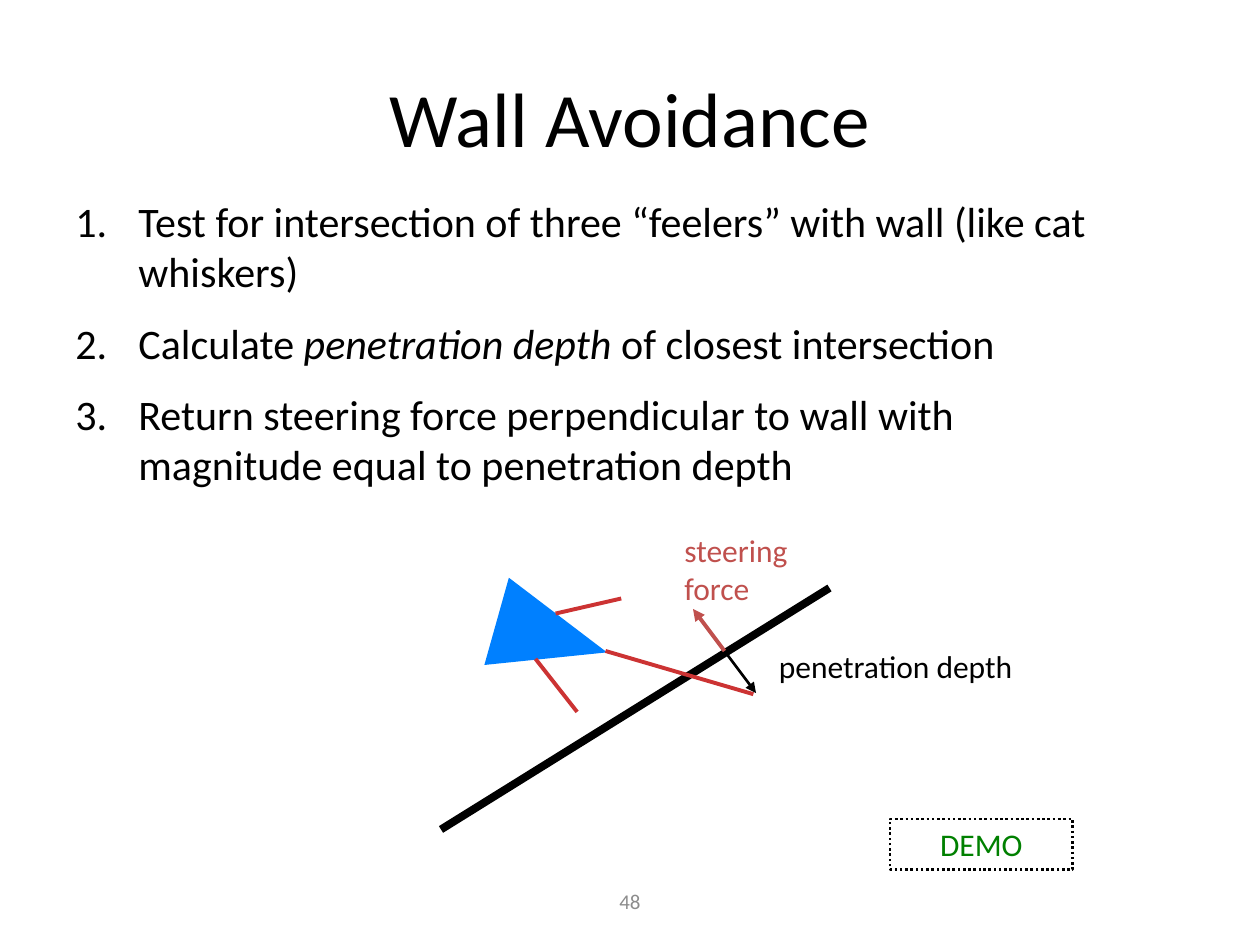
from lxml import etree
from pptx import Presentation
from pptx.dml.color import RGBColor
from pptx.enum.dml import MSO_LINE_DASH_STYLE as DASH
from pptx.enum.shapes import MSO_CONNECTOR as CONN, MSO_SHAPE as SHAPE
from pptx.enum.text import MSO_ANCHOR as ANCHOR, PP_ALIGN as ALIGN
from pptx.oxml.ns import qn
from pptx.util import Pt

FONT = "Calibri"
COLORS = {
    "text": "000000",
    "number": "8C8C8C",
    "agent": "0080FF",
    "feeler": "CC3333",
    "force": "C0504D",
    "demo": "008000",
}
STEPS = [
    [("Test for intersection of three “feelers” with wall (like cat whiskers)", False)],
    [("Calculate ", False), ("penetration depth", True), (" of closest intersection", False)],
    [("Return steering force perpendicular to wall with magnitude equal to penetration depth", False)],
]


def rgb(name):
    return RGBColor.from_string(COLORS[name])


def place(sp, box):
    for name, value in zip(("left", "top", "width", "height"), box):
        setattr(sp, name, Pt(value))


def add_run(p, text, size, color="text", **extra):
    r = p.add_run()
    r.text = text
    for name, value in {"name": FONT, "size": Pt(size), **extra}.items():
        setattr(r.font, name, value)
    r.font.color.rgb = rgb(color)


def write(sp, text, size, color="text", align=ALIGN.LEFT, anchor=ANCHOR.TOP):
    tf = sp.text_frame
    tf.word_wrap = True
    tf.vertical_anchor = anchor
    p = tf.paragraphs[0]
    p.alignment = align
    add_run(p, text, size, color)


def add_label(slide, box, text, size, **fmt):
    sp = slide.shapes.add_textbox(*map(Pt, box))
    write(sp, text, size, **fmt)


def add_line(slide, start, end, color, width, arrow=False):
    line = slide.shapes.add_connector(CONN.STRAIGHT, *map(Pt, (*start, *end)))
    line.line.color.rgb = rgb(color)
    line.line.width = Pt(width)
    if arrow:
        etree.SubElement(line.line._get_or_add_ln(), qn("a:tailEnd"), type="triangle")
    etree.SubElement(line._element.spPr, qn("a:effectLst"))


def add_title(slide, box):
    sp = slide.shapes.title
    place(sp, box)
    write(sp, "Wall Avoidance", 44, align=ALIGN.CENTER, anchor=ANCHOR.MIDDLE)


def add_steps(slide, box):
    tf = slide.shapes.add_textbox(*map(Pt, box)).text_frame
    tf.word_wrap = True
    for i, runs in enumerate(STEPS):
        p = tf.add_paragraph() if i else tf.paragraphs[0]
        p.space_before = Pt(12 if i else 0)
        pPr = p._p.get_or_add_pPr()
        pPr.set("marL", str(Pt(36)))
        pPr.set("indent", str(Pt(-36)))
        etree.SubElement(pPr, qn("a:buFont"), typeface="+mj-lt")
        etree.SubElement(pPr, qn("a:buAutoNum"), type="arabicPeriod")
        for text, italic in runs:
            add_run(p, text, 24, italic=italic)


def add_diagram(slide, left, top):
    def at(x, y):
        return left + x, top + y

    agent = slide.shapes.add_shape(SHAPE.ISOSCELES_TRIANGLE, 0, 0, 0, 0)
    place(agent, (*at(37.4, 31.2), 51.8, 65.5))
    agent.rotation = 105.7
    agent.shadow.inherit = False
    agent.fill.solid()
    agent.fill.fore_color.rgb = rgb("agent")
    agent.line.fill.background()

    add_line(slide, at(222, 36), at(0, 174), "text", 4.5)
    feelers = [((94, 72), (178.5, 96.7)), ((54, 76.5), (77.8, 106.8)), ((65.5, 50.6), (103, 42))]
    for start, end in feelers:
        add_line(slide, at(*start), at(*end), "feeler", 2.25)

    hit = at(162, 72)
    add_line(slide, hit, at(180, 96), "text", 1.5, arrow=True)
    add_line(slide, hit, at(144, 48), "force", 2.25, arrow=True)
    add_label(slide, (*at(132, 0), 114, 50.4), "steering force", 18, color="force")
    add_label(slide, (*at(186, 66), 192, 29), "penetration depth", 18)


def add_demo(slide, box):
    sp = slide.shapes.add_shape(SHAPE.RECTANGLE, *map(Pt, box))
    sp.shadow.inherit = False
    sp.fill.background()
    sp.line.color.rgb = rgb("text")
    sp.line.width = Pt(1.5)
    sp.line.dash_style = DASH.ROUND_DOT
    write(sp, "DEMO", 18, "demo", ALIGN.CENTER)


def main():
    prs = Presentation()
    prs.slide_width, prs.slide_height = Pt(720), Pt(540)
    slide = prs.slides.add_slide(prs.slide_layouts[5])
    add_label(slide, (246, 500.5, 228, 28.75), "48", 12, color="number",
              align=ALIGN.CENTER, anchor=ANCHOR.MIDDLE)
    add_title(slide, (36, 21.6, 648, 90))
    add_diagram(slide, 252, 300)
    add_steps(slide, (36, 108, 600, 181.5))
    add_demo(slide, (508.5, 468, 104.5, 29))
    prs.save("out.pptx")


if __name__ == "__main__":
    main()
